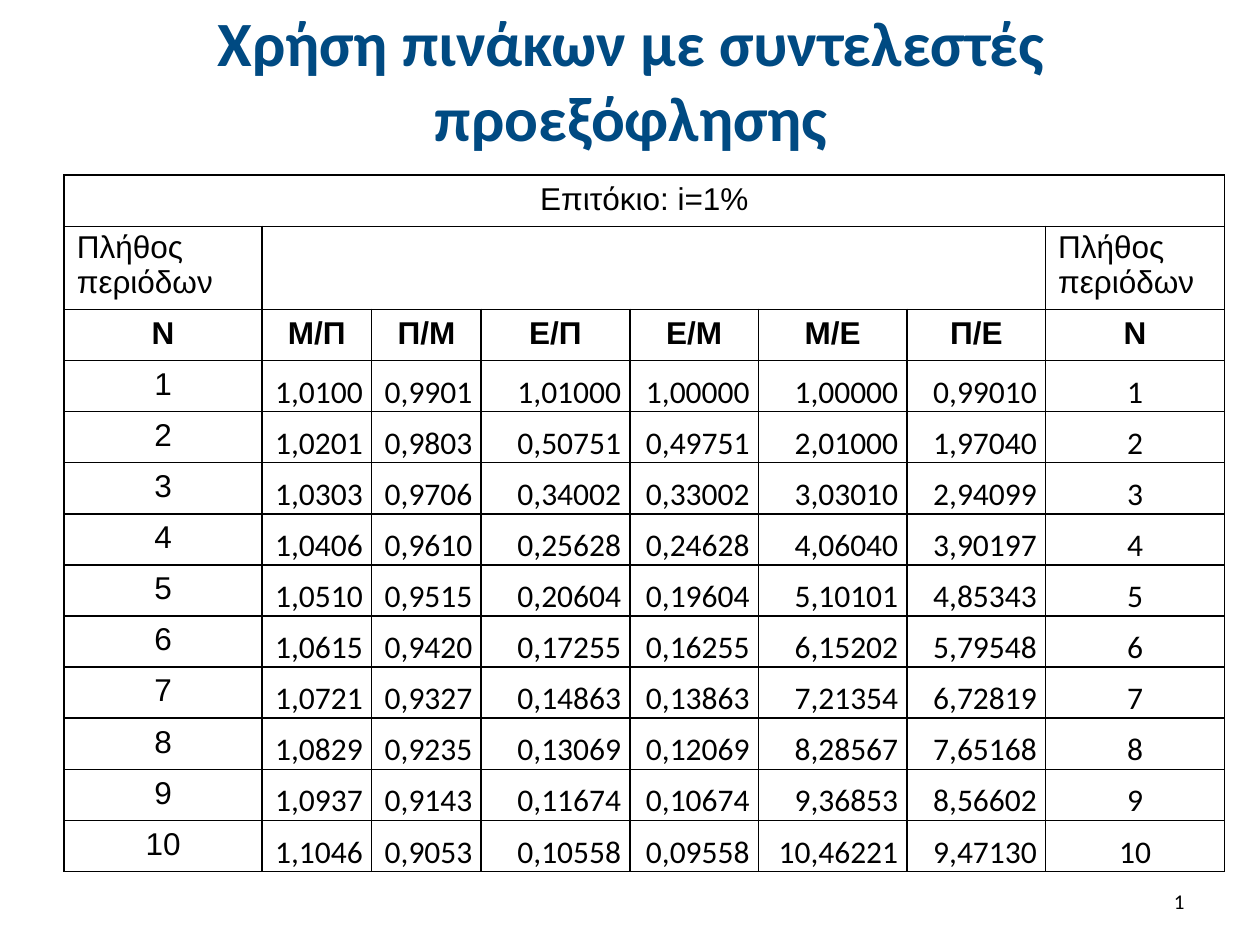
from lxml.etree import SubElement
from pptx import Presentation
from pptx.dml.color import RGBColor
from pptx.enum.text import MSO_ANCHOR, MSO_AUTO_SIZE, PP_ALIGN
from pptx.oxml.ns import qn
from pptx.util import Inches, Pt

THEME = {
    "title": {"name": "Calibri", "size": Pt(36), "bold": True, "color": "004A82"},
    "heading": {"name": "Arial", "size": Pt(18), "bold": False, "color": "000000"},
    "symbol": {"name": "Arial", "size": Pt(18), "bold": True, "color": "000000"},
    "factor": {"name": "Calibri", "size": Pt(18), "bold": False, "color": "000000"},
    "page": {"name": "Calibri", "size": Pt(12), "bold": False, "color": "000000"},
    "border": "000000",
}

SYMBOLS = ["Ν", "Μ/Π", "Π/Μ", "Ε/Π", "Ε/Μ", "Μ/Ε", "Π/Ε", "Ν"]
FACTORS = """
1,0100 0,9901 1,01000 1,00000 1,00000 0,99010
1,0201 0,9803 0,50751 0,49751 2,01000 1,97040
1,0303 0,9706 0,34002 0,33002 3,03010 2,94099
1,0406 0,9610 0,25628 0,24628 4,06040 3,90197
1,0510 0,9515 0,20604 0,19604 5,10101 4,85343
1,0615 0,9420 0,17255 0,16255 6,15202 5,79548
1,0721 0,9327 0,14863 0,13863 7,21354 6,72819
1,0829 0,9235 0,13069 0,12069 8,28567 7,65168
1,0937 0,9143 0,11674 0,10674 9,36853 8,56602
1,1046 0,9053 0,10558 0,09558 10,46221 9,47130
""".strip().splitlines()
COLUMN_WIDTHS = [1.57, 0.87, 0.87, 1.18, 1.02, 1.18, 1.1, 1.42]
TABLE_HEIGHT = 5.52
PERIODS_ROW = 0.65


def write(frame, text, style, align):
    paragraph = frame.paragraphs[0]
    paragraph.alignment = align
    run = paragraph.add_run()
    run.text = text
    for key, value in THEME[style].items():
        if key == "color":
            run.font.color.rgb = RGBColor.from_string(value)
        else:
            setattr(run.font, key, value)


def outline(cell):
    properties = cell._tc.get_or_add_tcPr()
    for side in ("a:lnL", "a:lnR", "a:lnT", "a:lnB"):
        line = SubElement(properties, qn(side), w=str(Pt(1)))
        fill = SubElement(line, qn("a:solidFill"))
        SubElement(fill, qn("a:srgbClr"), val=THEME["border"])


presentation = Presentation()
presentation.slide_width = Inches(10)
presentation.slide_height = Inches(7.5)
slide = presentation.slides.add_slide(presentation.slide_layouts[5])

title = slide.shapes.title
for key, value in {"left": 0.51, "top": 0.13, "width": 9, "height": 0.99}.items():
    setattr(title, key, Inches(value))
title.text_frame.auto_size = MSO_AUTO_SIZE.NONE
title.text_frame.vertical_anchor = MSO_ANCHOR.MIDDLE
write(title.text_frame, "Χρήση πινάκων με συντελεστές προεξόφλησης", "title", PP_ALIGN.CENTER)

page = slide.shapes.add_textbox(Inches(7.17), Inches(6.95), Inches(2.33), Inches(0.4)).text_frame
page.word_wrap = True
page.vertical_anchor = MSO_ANCHOR.MIDDLE
write(page, "1", "page", PP_ALIGN.RIGHT)

row_count = 3 + len(FACTORS)
last = len(SYMBOLS) - 1
table = slide.shapes.add_table(
    row_count, len(SYMBOLS), Inches(0.51), Inches(1.39),
    Inches(sum(COLUMN_WIDTHS)), Inches(TABLE_HEIGHT),
).table
table.first_row = False
table.horz_banding = False
for column, width in zip(table.columns, COLUMN_WIDTHS):
    column.width = Inches(width)
for row in table.rows:
    row.height = Inches((TABLE_HEIGHT - PERIODS_ROW) / (row_count - 1))
table.rows[1].height = Inches(PERIODS_ROW)

for cell in table.iter_cells():
    outline(cell)
    cell.fill.background()

table.cell(0, 0).merge(table.cell(0, last))
table.cell(1, 1).merge(table.cell(1, last - 1))

write(table.cell(0, 0).text_frame, "Επιτόκιο: i=1%", "heading", PP_ALIGN.CENTER)
for column in (0, last):
    periods = table.cell(1, column)
    periods.margin_top = periods.margin_bottom = Inches(0.03)
    write(periods.text_frame, "Πλήθος περιόδων", "heading", PP_ALIGN.LEFT)
for column, symbol in enumerate(SYMBOLS):
    write(table.cell(2, column).text_frame, symbol, "symbol", PP_ALIGN.CENTER)

factor_format = {
    "vertical_anchor": MSO_ANCHOR.BOTTOM,
    "margin_left": Inches(0.07),
    "margin_right": Inches(0.07),
    "margin_top": 0,
    "margin_bottom": 0,
}
for period, line in enumerate(FACTORS, start=1):
    row = period + 2
    write(table.cell(row, 0).text_frame, str(period), "heading", PP_ALIGN.CENTER)
    for column, value in enumerate(line.split() + [str(period)], start=1):
        factor = table.cell(row, column)
        for key, setting in factor_format.items():
            setattr(factor, key, setting)
        align = PP_ALIGN.CENTER if column == last else PP_ALIGN.RIGHT
        write(factor.text_frame, value, "factor", align)

presentation.save("out.pptx")
